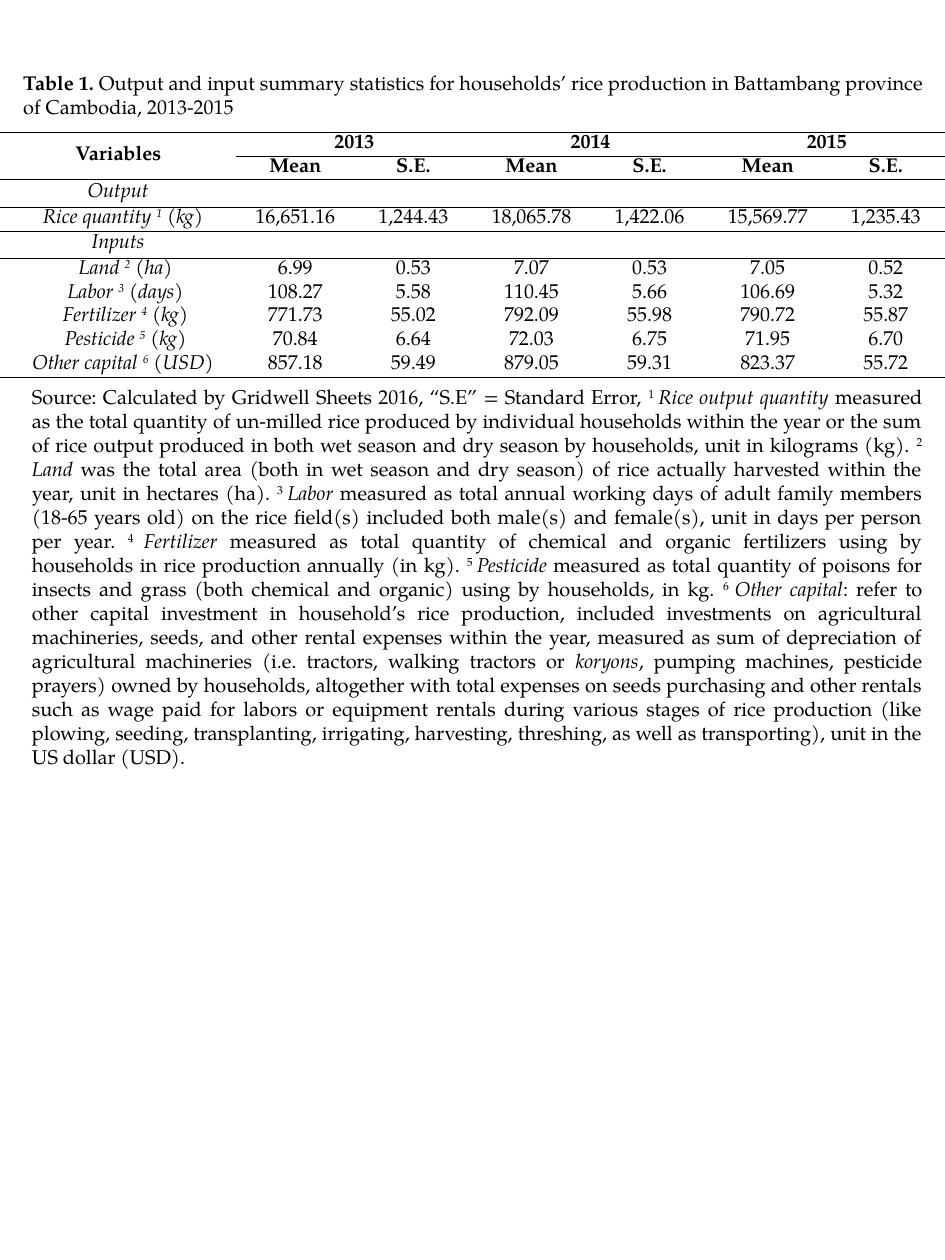
from lxml.etree import SubElement
from pptx import Presentation
from pptx.dml.color import RGBColor as Rgb
from pptx.enum.text import MSO_ANCHOR as Anchor, MSO_AUTO_SIZE as AutoSize, PP_ALIGN as Align
from pptx.oxml import parse_xml
from pptx.oxml.ns import nsdecls, qn
from pptx.util import Pt

PX = 6350
THEME = {
    "font": "TeX Gyre Pagella",
    "ink": "000000",
    "size": Pt(16),
    "leading": Pt(15),
    "rule": Pt(1),
    "superscript": "30000",
    "table_style": "{2D5ABB26-0587-4C30-8999-92F81FD0307C}",
}


def add_spans(para, spans):
    for text, style in spans:
        span = para.add_run()
        span.text = text
        span.font.name = THEME["font"]
        span.font.size = THEME["size"]
        span.font.color.rgb = Rgb.from_string(THEME["ink"])
        span.font.bold = "b" in style
        span.font.italic = "i" in style
        if "^" in style:
            span.font.language_id = None
            span._r.get_or_add_rPr().set("baseline", THEME["superscript"])


def add_text(slide, left, top, width, height, spans):
    box = slide.shapes.add_textbox(left * PX, top * PX, width * PX, height * PX)
    frame = box.text_frame
    frame.word_wrap = True
    frame.auto_size = AutoSize.SHAPE_TO_FIT_TEXT
    frame.vertical_anchor = Anchor.MIDDLE
    para = frame.paragraphs[0]
    para.alignment = Align.JUSTIFY
    add_spans(para, spans)


deck = Presentation()
deck.slide_width = 1512 * PX
deck.slide_height = 2016 * PX
slide = deck.slides.add_slide(deck.slide_layouts[6])

years = ["2013", "2014", "2015"]
variables = [
    ("Output", "", 0, []),
    ("Rice quantity ", "kg", 16,
     ["16,651.16", "1,244.43", "18,065.78", "1,422.06", "15,569.77", "1,235.43"]),
    ("Inputs", "", 0, []),
    ("Land ", "ha", 24, ["6.99", "0.53", "7.07", "0.53", "7.05", "0.52"]),
    ("Labor ", "days", 24, ["108.27", "5.58", "110.45", "5.66", "106.69", "5.32"]),
    ("Fertilizer ", "kg", 24, ["771.73", "55.02", "792.09", "55.98", "790.72", "55.87"]),
    ("Pesticide ", "kg", 24, ["70.84", "6.64", "72.03", "6.75", "71.95", "6.70"]),
    ("Other capital ", "USD", 16, ["857.18", "59.49", "879.05", "59.31", "823.37", "55.72"]),
]
row_count, column_count = 2 + len(variables), 1 + 2 * len(years)
row_height, label_width, value_width = 38, 378, 189
cell_inset = 10

table = slide.shapes.add_table(
    row_count, column_count, 0, 212 * PX, 1512 * PX, row_count * row_height * PX).table
table.first_row = False
table.horz_banding = False
table._tbl.tblPr.find(qn("a:tableStyleId")).text = THEME["table_style"]
for row in table.rows:
    row.height = row_height * PX
for index, column in enumerate(table.columns):
    column.width = (value_width if index else label_width) * PX

contents = {(0, 0): [("Variables", "b")]}
indents = {}
for index, year in enumerate(years):
    first = 1 + 2 * index
    contents[0, first] = [(year, "b")]
    contents[1, first] = [("Mean", "b")]
    contents[1, first + 1] = [("S.E.", "b")]
    table.cell(0, first).merge(table.cell(0, first + 1))
table.cell(0, 0).merge(table.cell(1, 0))

note_number = 0
for row, (name, unit, indent, values) in enumerate(variables, start=2):
    contents[row, 0] = [(name, "i")]
    indents[row, 0] = indent
    if unit:
        note_number += 1
        contents[row, 0] += [(str(note_number), "i^"), (f" ({unit})", "i")]
    for column, value in enumerate(values, start=1):
        contents[row, column] = [(value, "")]

ruled_edges = {0, 2, 4, row_count}
for row in range(row_count):
    for column in range(column_count):
        cell = table.cell(row, column)
        cell.fill.background()
        cell.vertical_anchor = Anchor.MIDDLE
        cell.margin_left = (cell_inset + indents.get((row, column), 0)) * PX
        cell.margin_right = cell_inset * PX
        cell.margin_top = cell.margin_bottom = 0
        para = cell.text_frame.paragraphs[0]
        para.alignment = Align.CENTER
        para.line_spacing = THEME["leading"]
        add_spans(para, contents.get((row, column), []))
        edges = ruled_edges | ({1} if column else set())
        if (row, column) == (0, 0):
            edges = edges | {1}
        for tag, edge in (("lnB", row + 1), ("lnT", row)):
            if edge in edges:
                line = parse_xml(f'<a:{tag} {nsdecls("a")} w="{THEME["rule"]}"/>')
                fill = SubElement(line, qn("a:solidFill"))
                SubElement(fill, qn("a:srgbClr")).set("val", THEME["ink"])
                cell._tc.get_or_add_tcPr().insert(0, line)

add_text(slide, 23, 105, 1469, 92, [
    ("Table 1.", "b"),
    (" Output and input summary statistics for households’ rice production in Battambang "
     "province of Cambodia, 2013-2015", ""),
])

notes = [
    ("Rice output quantity",
     " measured as the total quantity of un-milled rice produced by individual households "
     "within the year or the sum of rice output produced in both wet season and dry season "
     "by households, unit in kilograms (kg). "),
    ("Land",
     " was the total area (both in wet season and dry season) of rice actually harvested "
     "within the year, unit in hectares (ha). "),
    ("Labor",
     " measured as total annual working days of adult family members (18-65 years old) on "
     "the rice field(s) included both male(s) and female(s), unit in days per person per year. "),
    ("Fertilizer",
     " measured as total quantity of chemical and organic fertilizers using by households "
     "in rice production annually (in kg). "),
    ("Pesticide",
     " measured as total quantity of poisons for insects and grass (both chemical and "
     "organic) using by households, in kg. "),
    ("Other capital",
     ": refer to other capital investment in household’s rice production, included "
     "investments on agricultural machineries, seeds, and other rental expenses within the "
     "year, measured as sum of depreciation of agricultural machineries (i.e. tractors, "
     "walking tractors or "),
]
note_spans = [("Source: Calculated by Gridwell Sheets 2016, “S.E” = Standard Error, ", "")]
for number, (term, meaning) in enumerate(notes, start=1):
    note_spans += [(f"{number} ", "^"), (term, "i"), (meaning, "")]
note_spans += [
    ("koryons", "i"),
    (", pumping machines, pesticide prayers) owned by households, altogether with total "
     "expenses on seeds purchasing and other rentals such as wage paid for labors or "
     "equipment rentals during various stages of rice production (like plowing, seeding, "
     "transplanting, irrigating, harvesting, threshing, as well as transporting), unit in "
     "the US dollar (USD).", ""),
]
add_text(slide, 37, 624, 1453, 596, note_spans)

deck.save("out.pptx")
